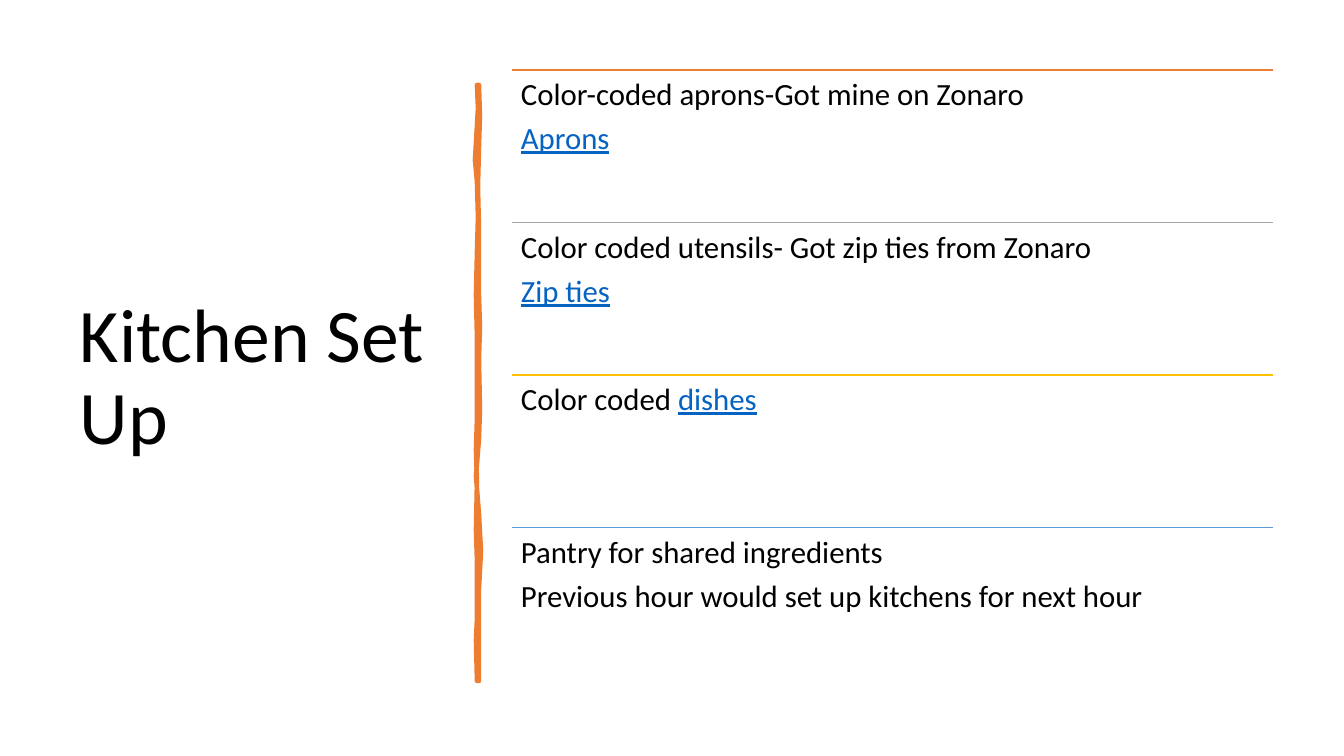
"""Build the kitchen set-up slide: a title, a hand-drawn divider and four ruled items."""
from dataclasses import dataclass

from pptx import Presentation
from pptx.dml.color import RGBColor
from pptx.enum.shapes import MSO_CONNECTOR
from pptx.enum.text import MSO_ANCHOR
from pptx.oxml.ns import qn
from pptx.util import Pt
from lxml.etree import SubElement

TITLE = "Kitchen Set Up"
ITEMS = [
    ("orange", [[("Color-coded aprons-Got mine on Zonaro", False)], [("Aprons", True)]]),
    ("gray", [[("Color coded utensils- Got zip ties from Zonaro", False)], [("Zip ties", True)]]),
    ("gold", [[("Color coded ", False), ("dishes", True)]]),
    ("blue", [[("Pantry for shared ingredients", False)],
              [("Previous hour would set up kitchens for next hour", False)]]),
]
DIVIDER = [
    (479, 85), (480, 116), (479, 147), (478, 187), (479, 228), (479, 296), (480, 327),
    (479, 359), (480, 410), (479, 439), (476, 476), (479, 514), (481, 551), (479, 589),
    (479, 681), (477, 681), (476, 640), (477, 618), (477, 561), (476, 530), (477, 481),
    (476, 450), (477, 418), (477, 338), (476, 295), (477, 252), (478, 217), (477, 182),
    (475, 160), (478, 108), (477, 85),
]
SLIDE = (1344, 756)
TITLE_BOX = (70, 71, 377, 616)
LIST_BOX = (512, 70, 761, 610)
TITLE_INSET, ITEM_INSET = 10, 9
EMU_PER_PX = 914400 / 100.8


@dataclass(frozen=True)
class Theme:
    """Colours, font and type sizes of the slide."""
    font: str = "Calibri"
    text: str = "000000"
    link: str = "0563C1"
    orange: str = "ED7D31"
    gray: str = "A5A5A5"
    gold: str = "FFC000"
    blue: str = "5B9BD5"
    title_size: int = 54
    item_size: int = 22
    item_gap: float = 7.7
    line_spacing: float = 0.9
    rule_width: float = 1
    divider_width: float = 3.25


THEME = Theme()


def px(length):
    """Turn px into EMU."""
    return round(length * EMU_PER_PX)


def add_text(slide, box, paragraphs, size, inset, anchor, gap=0):
    """Write paragraphs of (words, is_link) runs into a wrapping text box."""
    frame = slide.shapes.add_textbox(*map(px, box)).text_frame
    frame.word_wrap = True
    frame.vertical_anchor = anchor
    frame.margin_left = frame.margin_right = px(inset)
    frame.margin_top = frame.margin_bottom = px(inset)
    for index, pieces in enumerate(paragraphs):
        paragraph = frame.add_paragraph() if index else frame.paragraphs[0]
        paragraph.line_spacing = THEME.line_spacing
        paragraph.space_after = Pt(gap)
        for words, is_link in pieces:
            run = paragraph.add_run()
            run.text = words
            run.font.name = THEME.font
            run.font.size = Pt(size)
            run.font.underline = is_link
            run.font.color.rgb = RGBColor.from_string(THEME.link if is_link else THEME.text)


def add_divider(slide):
    """Draw the uneven vertical stroke."""
    builder = slide.shapes.build_freeform(*DIVIDER[0], scale=EMU_PER_PX)
    builder.add_line_segments(DIVIDER[1:], close=True)
    divider = builder.convert_to_shape()
    divider.shadow.inherit = False
    divider.fill.solid()
    divider.fill.fore_color.rgb = RGBColor.from_string(THEME.orange)
    divider.line.color.rgb = RGBColor.from_string(THEME.orange)
    divider.line.width = Pt(THEME.divider_width)


def add_rule(slide, left, top, width, color):
    """Draw the thin line above an item."""
    rule = slide.shapes.add_connector(
        MSO_CONNECTOR.STRAIGHT, px(left), px(top), px(left + width), px(top))
    rule.line.color.rgb = RGBColor.from_string(color)
    rule.line.width = Pt(THEME.rule_width)
    SubElement(rule._element.spPr, qn("a:effectLst"))


def main():
    """Build and save the slide."""
    deck = Presentation()
    deck.slide_width, deck.slide_height = map(px, SLIDE)
    slide = deck.slides.add_slide(deck.slide_layouts[6])
    add_text(slide, TITLE_BOX, [[(TITLE, False)]], THEME.title_size, TITLE_INSET,
             MSO_ANCHOR.MIDDLE)
    add_divider(slide)
    left, list_top, width, height = LIST_BOX
    pitch = height / len(ITEMS)
    for row, (accent, paragraphs) in enumerate(ITEMS):
        top = list_top + row * pitch
        add_rule(slide, left, top, width, getattr(THEME, accent))
        add_text(slide, (left, top, width, pitch), paragraphs, THEME.item_size, ITEM_INSET,
                 MSO_ANCHOR.TOP, THEME.item_gap)
    deck.save("out.pptx")


if __name__ == "__main__":
    main()
